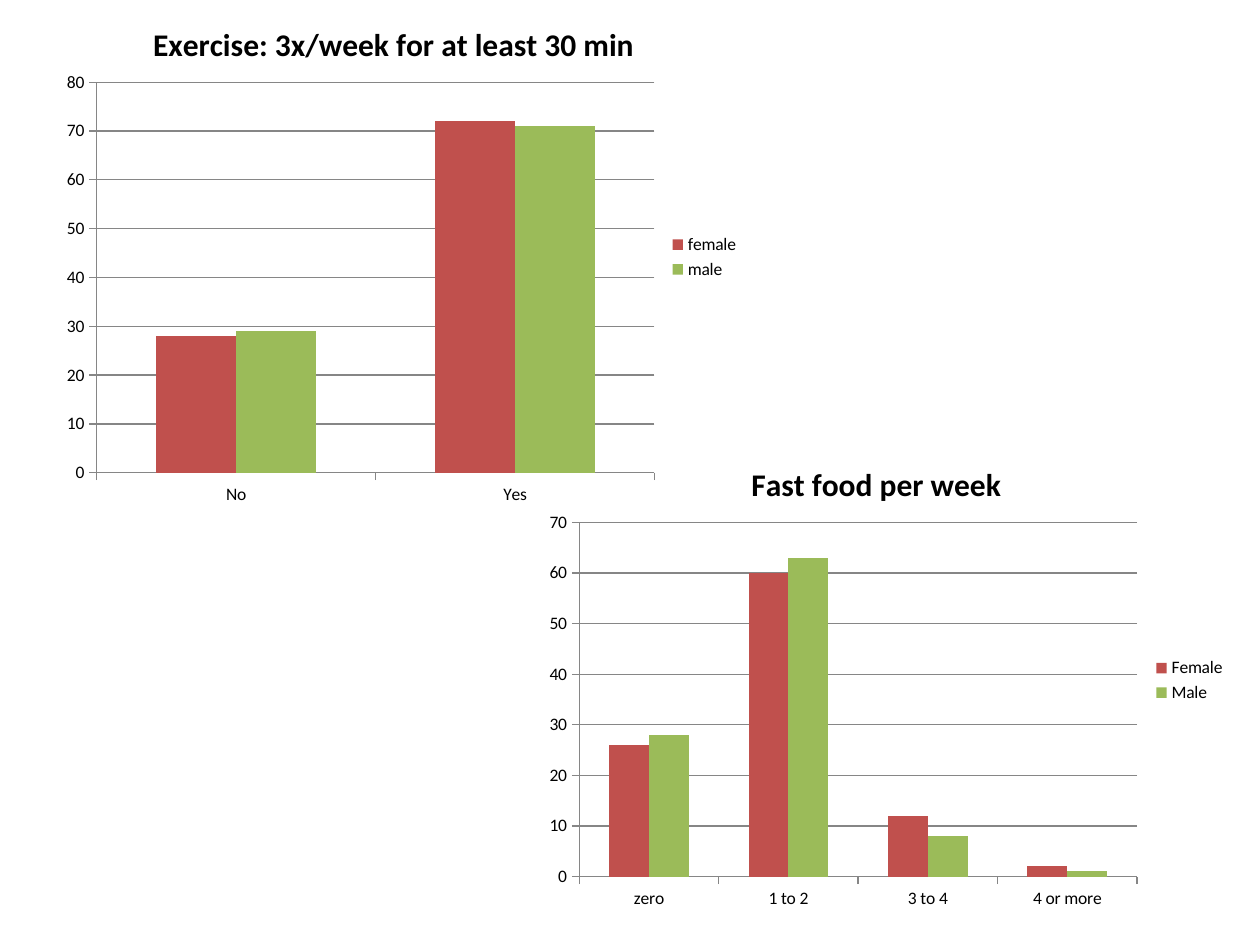
from lxml.etree import SubElement
from pptx import Presentation
from pptx.chart.data import CategoryChartData
from pptx.dml.color import RGBColor
from pptx.enum.chart import XL_CHART_TYPE, XL_LEGEND_POSITION, XL_TICK_MARK
from pptx.oxml.ns import qn
from pptx.util import Inches, Pt


def paint(color, code):
    color.rgb = RGBColor.from_string(code)


def place(chart, box):
    area = chart.element.find(".//" + qn("c:plotArea"))
    for old in area.findall(qn("c:layout")):
        area.remove(old)
    frame = SubElement(area, qn("c:layout"))
    area.insert(0, frame)
    inner = SubElement(frame, qn("c:manualLayout"))
    tags = ["layoutTarget", "xMode", "yMode", "x", "y", "w", "h"]
    for tag, val in zip(tags, ["inner", "edge", "edge", *box]):
        SubElement(inner, qn("c:" + tag)).set("val", str(val))


deck = Presentation()
deck.slide_width, deck.slide_height = Inches(10), Inches(7.5)
slide = deck.slides.add_slide(deck.slide_layouts[6])

charts = [
    ("Exercise: 3x/week for at least 30 min", (0.25, 0, 5.75, 4.08),
     (0.09, 0.16, 0.77, 0.76), 80, ["No", "Yes"],
     {"female ": [28, 72], "male": [29, 71]}),
    ("Fast food per week", (4.08, 3.5, 5.75, 3.8),
     (0.09, 0.17, 0.77, 0.74), 70, ["zero", "1 to 2", "3 to 4", "4 or more"],
     {"Female": [26, 60, 12, 2], "Male": [28, 63, 8, 1]}),
]

for title, spot, plot, top, cats, rows in charts:
    data = CategoryChartData()
    data.categories = cats
    for name, vals in rows.items():
        data.add_series(name, vals)
    chart = slide.shapes.add_chart(
        XL_CHART_TYPE.COLUMN_CLUSTERED, *map(Inches, spot), data).chart
    chart.font.name = "Calibri"
    chart.font.size = Pt(10)
    paint(chart.font.color, "000000")

    run = chart.chart_title.text_frame.paragraphs[0].add_run()
    run.text = title
    run.font.name = "Calibri"
    run.font.size = Pt(18)
    run.font.bold = True
    paint(run.font.color, "000000")
    chart.chart_title.include_in_layout = False

    chart.has_legend = True
    chart.legend.position = XL_LEGEND_POSITION.RIGHT
    chart.legend.include_in_layout = False

    scale = chart.value_axis
    scale.minimum_scale, scale.maximum_scale, scale.major_unit = 0, top, 10
    scale.has_major_gridlines = True
    for part in (scale, chart.category_axis):
        part.major_tick_mark = XL_TICK_MARK.OUTSIDE
    for part in (scale, chart.category_axis, scale.major_gridlines):
        part.format.line.width = Pt(0.75)
        paint(part.format.line.color, "868686")

    bars = chart.plots[0]
    bars.gap_width, bars.overlap = 150, 0
    bars.vary_by_categories = False
    for row, code in zip(bars.series, ["C0504D", "9BBB59"]):
        row.format.fill.solid()
        paint(row.format.fill.fore_color, code)
    place(chart, plot)

deck.save("out.pptx")
